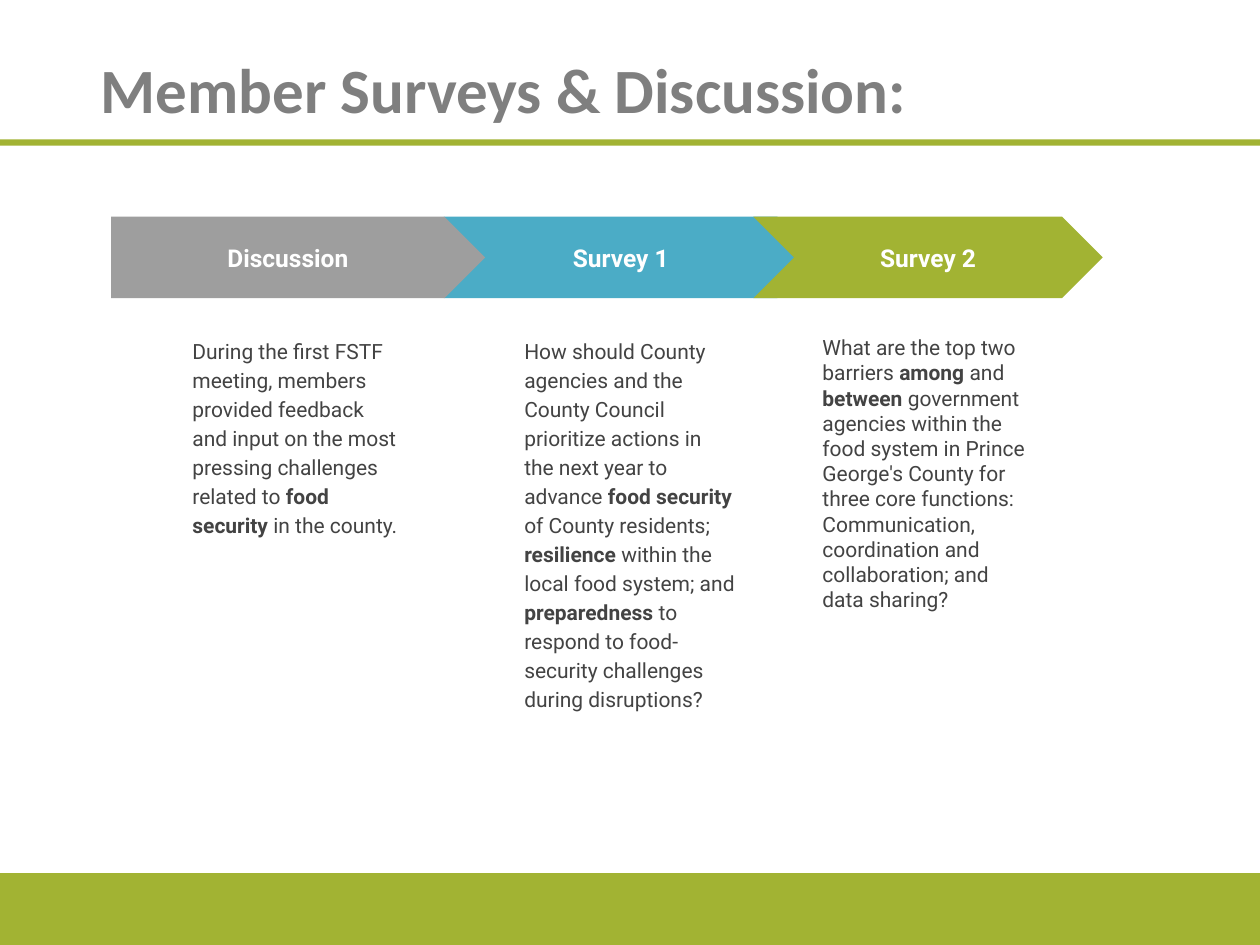
from pptx import Presentation
from pptx.dml.color import RGBColor
from pptx.enum.shapes import MSO_SHAPE as Shape
from pptx.enum.text import MSO_ANCHOR as Anchor, PP_ALIGN as Align
from pptx.util import Cm, Pt

GREEN = RGBColor(0xA2, 0xB3, 0x33)
BLUE = RGBColor(0x4B, 0xAC, 0xC6)
SILVER = RGBColor(0x9E, 0x9E, 0x9E)
TITLE_GRAY = RGBColor(0x7F, 0x7F, 0x7F)
TEXT_GRAY = RGBColor(0x43, 0x43, 0x43)
WHITE = RGBColor(0xFF, 0xFF, 0xFF)

PAGE_WIDTH, PAGE_HEIGHT = 25.4, 19.05
ARROW_HEIGHT = 1.64

# Arrow shape, left, width, colour, text offset, line spacing, heading, body;
# ordered from back to front, with bold words between asterisks
STEPS = [
    (Shape.PENTAGON, 8.95, 7.54, BLUE, 1.37, 1.15, "Survey 1",
     "How should County agencies and the County Council prioritize actions in "
     "the next year to advance *food security* of County residents; "
     "*resilience* within the local food system; and *preparedness* to respond "
     "to food-security challenges during disruptions?"),
    (Shape.CHEVRON, 15.19, 7.04, GREEN, 1.14, 1.0, "Survey 2",
     "What are the top two barriers *among* and *between* government agencies "
     "within the food system in Prince George's County for three core "
     "functions: Communication, coordination and collaboration; and data "
     "sharing?"),
    (Shape.PENTAGON, 2.24, 7.54, SILVER, 1.39, 1.15, "Discussion",
     "During the first FSTF meeting, members provided feedback and input on "
     "the most pressing challenges related to *food security* in the county."),
]


def write_text(box, text, *, size, color, font="Roboto", bold=False,
               align=Align.LEFT, anchor=Anchor.TOP, spacing=1.0, inset=0.25):
    """Fill a box with one paragraph; asterisks enclose bold words."""
    frame = box.text_frame
    frame.word_wrap = True
    frame.vertical_anchor = anchor
    frame.margin_left = frame.margin_right = Cm(0.25)
    frame.margin_top = frame.margin_bottom = Cm(inset)
    para = frame.paragraphs[0]
    para.alignment = align
    para.line_spacing = spacing
    for index, part in enumerate(text.split("*")):
        span = para.add_run()
        span.text = part
        span.font.name = font
        span.font.size = Pt(size)
        span.font.bold = bold or index % 2 == 1
        span.font.color.rgb = color


def add_block(page, kind, left, top, width, height, color):
    block = page.shapes.add_shape(kind, Cm(left), Cm(top), Cm(width), Cm(height))
    block.shadow.inherit = False
    block.fill.solid()
    block.fill.fore_color.rgb = color
    block.line.fill.background()
    return block


def add_text(page, left, top, width, height, text, **style):
    box = page.shapes.add_textbox(Cm(left), Cm(top), Cm(width), Cm(height))
    write_text(box, text, **style)


def add_frame(page, width, height):
    """Footer band and the rule below the title."""
    footer = 1.45
    add_block(page, Shape.RECTANGLE, 0, height - footer, width, footer, GREEN)
    add_block(page, Shape.RECTANGLE, 0, 2.81, width, 0.13, GREEN)


def add_title(page, left, top, width, height):
    add_text(page, left, top, width, height, "Member Surveys & Discussion:",
             size=36, color=TITLE_GRAY, font="Calibri", bold=True,
             anchor=Anchor.MIDDLE, inset=0.13)


def add_step(page, top, step):
    """Arrow with its heading, and the explanation below it."""
    kind, left, width, color, offset, spacing, heading, body = step
    arrow = add_block(page, kind, left, top, width, ARROW_HEIGHT, color)
    write_text(arrow, heading, size=14, color=WHITE, bold=True,
               align=Align.CENTER, anchor=Anchor.MIDDLE)
    add_text(page, left + offset, top + 2.13, 4.75, 6.43, body,
             size=12, color=TEXT_GRAY, spacing=spacing)


def main():
    deck = Presentation()
    deck.slide_width, deck.slide_height = Cm(PAGE_WIDTH), Cm(PAGE_HEIGHT)
    page = deck.slides.add_slide(deck.slide_layouts[6])
    add_frame(page, PAGE_WIDTH, PAGE_HEIGHT)
    add_title(page, 1.78, 0.71, 22.28, 2.16)
    for step in STEPS:
        add_step(page, 4.37, step)
    deck.save("out.pptx")


if __name__ == "__main__":
    main()
